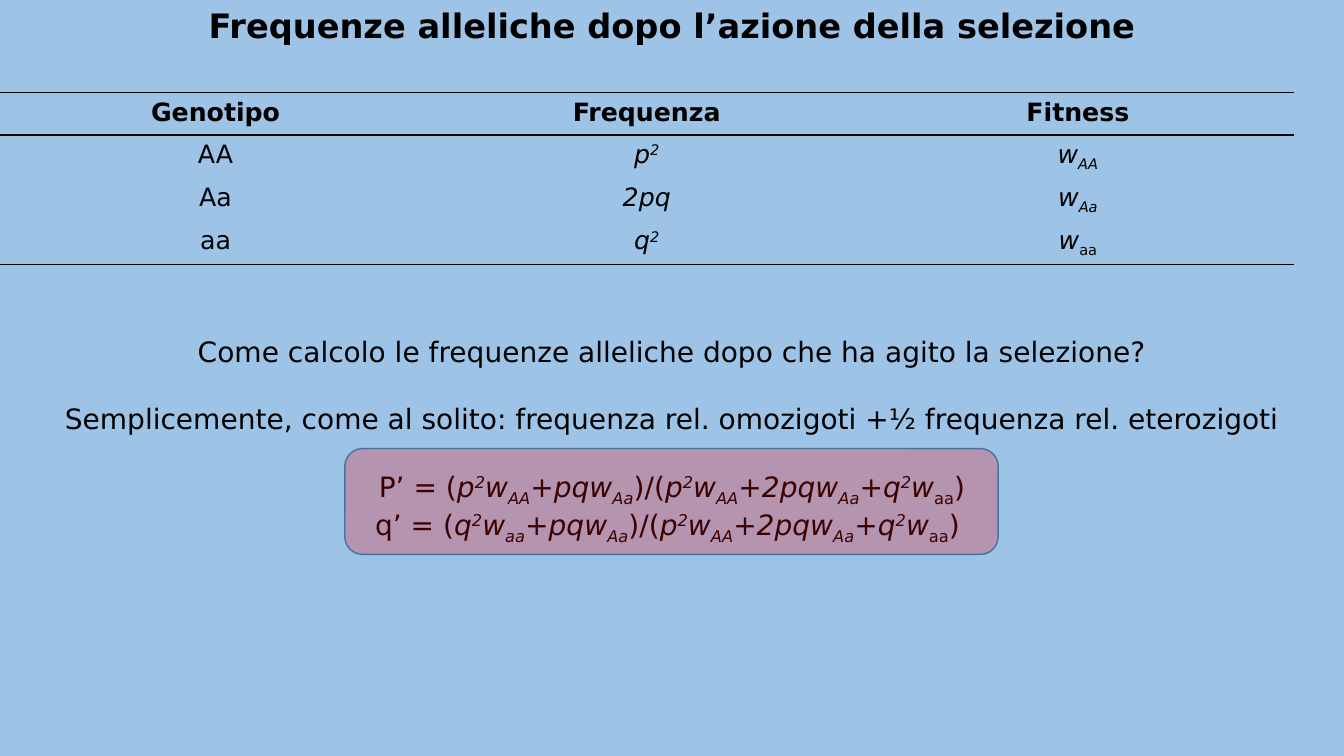
from lxml import etree
from pptx import Presentation
from pptx.dml.color import RGBColor
from pptx.enum.shapes import MSO_SHAPE
from pptx.enum.text import MSO_ANCHOR, PP_ALIGN
from pptx.oxml.ns import qn
from pptx.util import Inches, Pt

CENTER = PP_ALIGN.CENTER
TOP = MSO_ANCHOR.TOP
ROUNDED = MSO_SHAPE.ROUNDED_RECTANGLE
TITLE_ONLY = 5
BASELINES = {"^": "30000", "_": "-25000"}


def rgb(value):
    return RGBColor.from_string(value)


class Deck:
    font = "DejaVu Sans"
    ink = "000000"

    def __init__(self, background):
        self.prs = Presentation()
        self.prs.slide_width, self.prs.slide_height = Inches(13.33), Inches(7.5)
        self.slide = self.prs.slides.add_slide(self.prs.slide_layouts[TITLE_ONLY])
        self.slide.background.fill.solid()
        self.slide.background.fill.fore_color.rgb = rgb(background)

    def add_runs(self, p, runs, size, bold=False):
        """Runs are (text, marks); marks: i italic, ^ superscript, _ subscript."""
        p.alignment = CENTER
        for text, marks in runs:
            r = p.add_run()
            r.text = text
            r.font.name, r.font.size = self.font, Pt(size)
            r.font.bold, r.font.italic = bold, "i" in marks
            r.font.color.rgb = rgb(self.ink)
            for mark in BASELINES.keys() & set(marks):
                r.font._element.set("baseline", BASELINES[mark])

    def title(self, text, x, y, w, h):
        sp = self.slide.shapes.title
        sp.left, sp.top, sp.width, sp.height = map(Inches, (x, y, w, h))
        tf = sp.text_frame
        tf.vertical_anchor = TOP
        self.add_runs(tf.paragraphs[0], [(text, "")], 24, bold=True)

    def border(self, cell, side, visible):
        ln = etree.SubElement(cell._tc.get_or_add_tcPr(), qn(f"a:ln{side}"), w="12700")
        if visible:
            fill = etree.SubElement(ln, qn("a:solidFill"))
            etree.SubElement(fill, qn("a:srgbClr"), val=self.ink)
        else:
            etree.SubElement(ln, qn("a:noFill"))

    def table(self, rows, x, y, w, h):
        table = self.slide.shapes.add_table(
            len(rows), len(rows[0]), *map(Inches, (x, y, w, h))).table
        table.first_row = table.horz_banding = False
        last = len(rows) - 1
        for i, row in enumerate(rows):
            for j, runs in enumerate(row):
                cell = table.cell(i, j)
                self.add_runs(cell.text_frame.paragraphs[0], runs, 18, bold=i == 0)
                # Rules above and below the header and under the last row
                ruled = {"T": i in (0, 1), "B": i in (0, last)}
                for side in "LRTB":
                    self.border(cell, side, ruled.get(side, False))
                cell.fill.background()

    def text(self, paragraphs, x, y, w, h):
        tf = self.slide.shapes.add_textbox(*map(Inches, (x, y, w, h))).text_frame
        tf.word_wrap = True
        for n, (runs, before) in enumerate(paragraphs):
            p = tf.add_paragraph() if n else tf.paragraphs[0]
            p.space_before = Pt(before)
            self.add_runs(p, runs, 20)

    def highlight(self, x, y, w, h, color, opacity, line):
        sp = self.slide.shapes.add_shape(ROUNDED, *map(Inches, (x, y, w, h)))
        sp.shadow.inherit = False
        sp.fill.solid()
        sp.fill.fore_color.rgb = rgb(color)
        clr = sp._element.spPr.find(f"{qn('a:solidFill')}/{qn('a:srgbClr')}")
        etree.SubElement(clr, qn("a:alpha"), val=str(opacity * 1000))
        sp.line.color.rgb = rgb(line)
        sp.line.width = Pt(1)


def fitness(genotype, marks="i_"):
    return [("w", "i"), (genotype, marks)]


def square(allele):
    return [(allele, "i"), ("2", "i^")]


def new_frequency(label, allele, genotype, end):
    """Allele frequency after selection: own share over mean fitness."""
    return [(f"{label}’ = (", ""), *square(allele), *fitness(genotype),
            ("+pq", "i"), *fitness("Aa"), (")/(", ""),
            *square("p"), *fitness("AA"), ("+2pq", "i"), *fitness("Aa"),
            *square("+q"), *fitness("aa", "_"), (end, "")]


def main():
    deck = Deck("9DC3E6")

    # Title
    deck.title("Frequenze alleliche dopo l’azione della selezione", 0, 0, 13.33, 0.5)

    # Genotype table
    header = [[(name, "")] for name in ("Genotipo", "Frequenza", "Fitness")]
    deck.table([
        header,
        [[("AA", "")], square("p"), fitness("AA")],
        [[("Aa", "")], [("2pq", "i")], fitness("Aa")],
        [[("aa", "")], square("q"), fitness("aa", "_")],
    ], 0, 0.92, 12.83, 1.68)

    # Question, answer and formulas
    question = "Come calcolo le frequenze alleliche dopo che ha agito la selezione?"
    answer = ("Semplicemente, come al solito: frequenza rel. omozigoti "
              "+½ frequenza rel. eterozigoti")
    deck.text([
        ([(question, "")], 0),
        ([(answer, "")], 24),
        (new_frequency("P", "p", "AA", ")"), 24),
        (new_frequency("q", "q", "aa", ") "), 0),
    ], 0, 3.27, 13.33, 2.69)

    # Formula highlight
    deck.highlight(3.42, 4.45, 6.48, 1.05, "FF0000", 24, "43739E")

    deck.prs.save("out.pptx")


if __name__ == "__main__":
    main()
